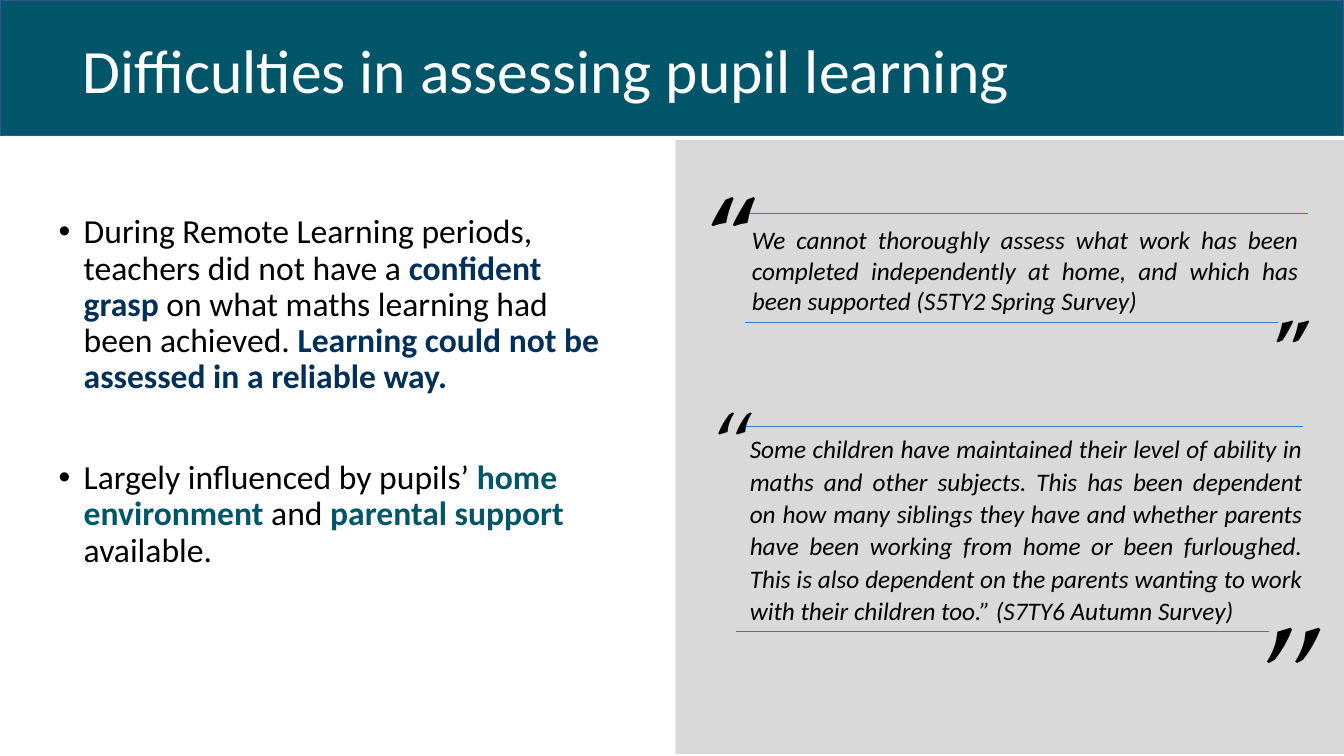
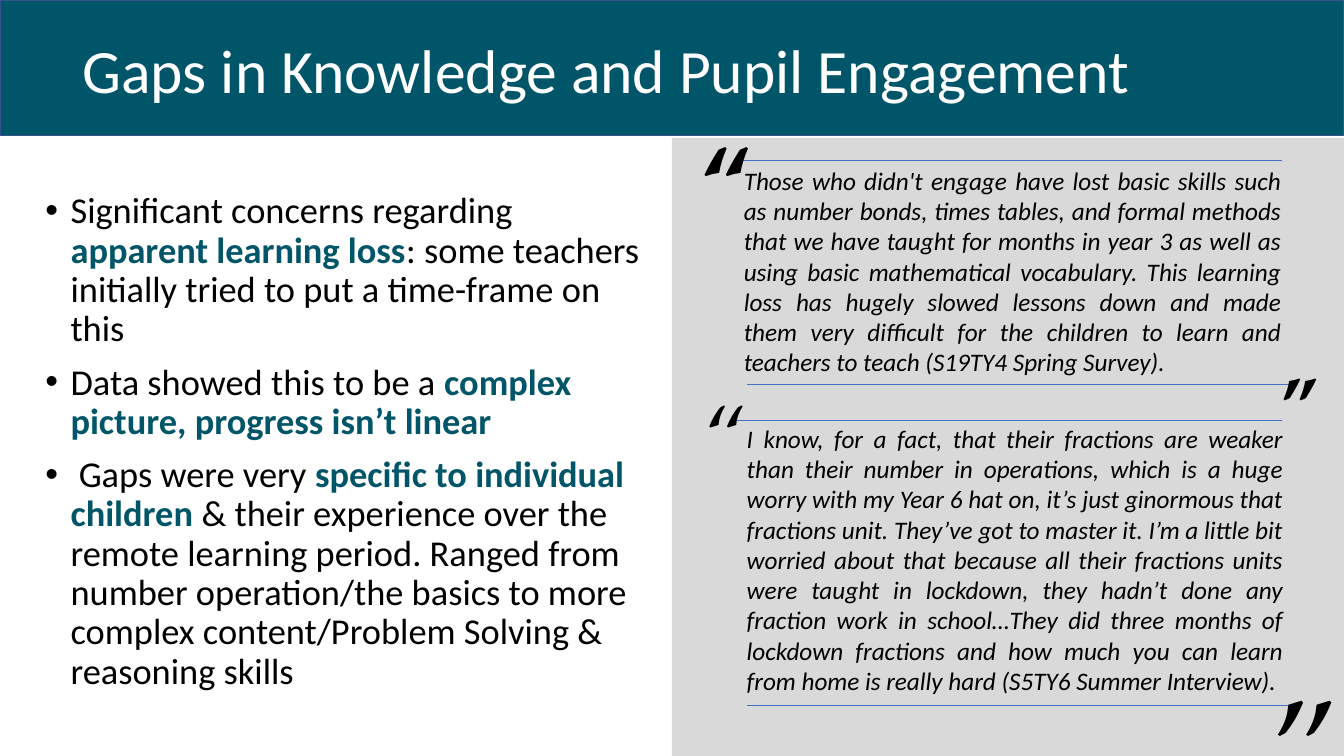
from dataclasses import dataclass
from typing import NamedTuple

from lxml import etree
from pptx import Presentation
from pptx import util as u
from pptx.dml.color import RGBColor
from pptx.enum import shapes, text
from pptx.oxml.ns import qn

# Shared look
WIDTH, HEIGHT = 960, 540
TEAL, NAVY, GREY = "005568", "003057", "D9D9D9"
BLUE, EDGE, BLACK, WHITE = "4472C4", "325491", "000000", "FFFFFF"
FONT, MARK_FONT = "Calibri", "TeX Gyre Pagella"
BAND_HEIGHT = 97


class Box(NamedTuple):
    left: float
    top: float
    width: float
    height: float


class Rule(NamedTuple):
    start: float
    end: float
    y: float


class Mark(NamedTuple):
    left: float
    top: float
    size: float
    bold: bool = False


class Run(NamedTuple):
    words: str
    color: str = BLACK  # any other colour marks bold emphasis


@dataclass
class Quote:
    words: str
    box: Box
    upper: Rule
    lower: Rule
    opening: Mark
    closing: Mark
    indent: float = 0
    spacing: float = 1.0
    after: float = 0


@dataclass
class Page:
    title: str
    body: Box
    size: float
    gaps: list[float]
    bullets: list[list[Run]]
    panel: Box
    quotes: list[Quote]


TITLE = Box(51.8, 0, 828, 104.4)

PAGES = [
    Page(
        "Difficulties in assessing pupil learning",
        Box(34.6, 149.8, 418.3, 342.7), 24, [10, 46],
        [
            [Run("During Remote Learning periods, teachers did not have a "),
             Run("confident grasp ", NAVY),
             Run("on what maths learning had been achieved. "),
             Run("Learning could not be assessed in a reliable way.", NAVY)],
            [Run("Largely influenced by pupils’ "),
             Run("home environment ", TEAL), Run("and "),
             Run("parental support ", TEAL), Run("available.")],
        ],
        Box(482.4, 100, 477.6, 438.5),
        [
            Quote(
                "We cannot thoroughly assess what work has been completed "
                "independently at home, and which has been supported "
                "(S5TY2 Spring Survey)",
                Box(530, 157, 404.6, 72.7),
                Rule(535.7, 934.6, 152.6), Rule(532, 913, 230.4),
                Mark(499, 115.2, 72, True), Mark(903.6, 209.5, 54, True)),
            Quote(
                "Some children have maintained their level of ability in "
                "maths and other subjects. This has been dependent on how "
                "many siblings they have and whether parents have been "
                "working from home or been furloughed. This is also "
                "dependent on the parents wanting to work with their "
                "children too.” (S7TY6 Autumn Survey)",
                Box(492.5, 304.6, 445, 146.2),
                Rule(532, 931, 304.6), Rule(525.6, 906.5, 450.7),
                Mark(503.3, 274.3, 60), Mark(893.5, 417.6, 96),
                indent=36, spacing=1.07, after=8),
        ],
    ),
    Page(
        "Gaps in Knowledge and Pupil Engagement",
        Box(25.2, 133.9, 440, 378.7), 26, [10, 10, 10],
        [
            [Run("Significant concerns regarding "),
             Run("apparent learning loss", TEAL),
             Run(": some teachers initially tried to put a time-frame on "
                 "this")],
            [Run("Data showed this to be a "),
             Run("complex picture, progress isn’t linear", TEAL)],
            [Run(" Gaps were very "),
             Run("specific to individual children ", TEAL),
             Run("& their experience over the remote learning period. "
                 "Ranged from number operation/the basics to more complex "
                 "content/Problem Solving & reasoning skills")],
        ],
        Box(480, 98.6, 480, 441.4),
        [
            Quote(
                "Those who didn't engage have lost basic skills such as "
                "number bonds, times tables, and formal methods that we "
                "have taught for months in year 3 as well as using basic "
                "mathematical vocabulary. This learning loss has hugely "
                "slowed lessons down and made them very difficult for the "
                "children to learn and teachers to teach "
                "(S19TY4 Spring Survey).",
                Box(524.2, 114.5, 398.2, 159.8),
                Rule(526.3, 915.8, 114.5), Rule(533.5, 924.5, 274.3),
                Mark(493.9, 79.9, 72, True), Mark(908.6, 250.6, 54, True)),
            Quote(
                "I know, for a fact, that their fractions are weaker than "
                "their number in operations, which is a huge worry with my "
                "Year 6 hat on, it’s just ginormous that fractions unit. "
                "They’ve got to master it. I’m a little bit worried about "
                "that because all their fractions units were taught in "
                "lockdown, they hadn’t done any fraction work in "
                "school…They did three months of lockdown fractions and how "
                "much you can learn from home is really hard "
                "(S5TY6 Summer Interview).",
                Box(490.3, 298.8, 433.4, 203.8),
                Rule(524.9, 915.8, 300.2), Rule(533.5, 923, 504),
                Mark(496.8, 269.3, 60), Mark(901.4, 469.4, 96),
                indent=36, after=8),
        ],
    ),
]


def rgb(value: str) -> RGBColor:
    return RGBColor.from_string(value)


def points(box: Box) -> list[u.Length]:
    return [u.Pt(v) for v in box]


def add_text(p, words: str, *, size: float, color: str = BLACK,
             font: str = FONT, bold: bool = False,
             italic: bool = False) -> None:
    r = p.add_run()
    r.text = words
    f = r.font
    f.name, f.size, f.bold, f.italic = font, u.Pt(size), bold, italic
    f.color.rgb = rgb(color)


def indent_paragraph(p, left: float, first: float) -> None:
    pPr = p._p.get_or_add_pPr()
    pPr.set("marL", str(int(u.Pt(left))))
    pPr.set("indent", str(int(u.Pt(first))))


def place(sp, box: Box, anchor=text.MSO_ANCHOR.TOP):
    sp.left, sp.top, sp.width, sp.height = points(box)
    tf = sp.text_frame
    tf.word_wrap = True
    tf.auto_size = text.MSO_AUTO_SIZE.NONE
    tf.vertical_anchor = anchor
    return tf


def add_textbox(s, box: Box):
    sp = s.shapes.add_textbox(*points(box))
    return place(sp, box).paragraphs[0]


def add_rect(s, box: Box, fill: str, edge: str | None = None):
    sp = s.shapes.add_shape(shapes.MSO_SHAPE.RECTANGLE, *points(box))
    sp.shadow.inherit = False
    sp.fill.solid()
    sp.fill.fore_color.rgb = rgb(fill)
    if edge:
        sp.line.color.rgb = rgb(edge)
        sp.line.width = u.Pt(1)
    else:
        sp.line.fill.background()
    return sp


def add_rule(s, rule: Rule) -> None:
    line = s.shapes.add_connector(
        shapes.MSO_CONNECTOR.STRAIGHT, u.Pt(rule.start), u.Pt(rule.y),
        u.Pt(rule.end), u.Pt(rule.y))
    line.line.color.rgb = rgb(BLUE)
    line.line.width = u.Pt(0.5)
    etree.SubElement(line.element.spPr, qn("a:effectLst"))


def add_mark(s, glyph: str, mark: Mark) -> None:
    height = min(mark.size * 1.3, HEIGHT - mark.top)
    p = add_textbox(s, Box(mark.left, mark.top, 50, height))
    add_text(p, glyph, size=mark.size, font=MARK_FONT, bold=mark.bold)


def add_quote(s, quote: Quote) -> None:
    p = add_textbox(s, quote.box)
    p.alignment = text.PP_ALIGN.JUSTIFY
    p.line_spacing = quote.spacing
    p.space_after = u.Pt(quote.after)
    indent_paragraph(p, quote.indent, 0)
    add_text(p, quote.words, size=18, italic=True)
    for rule in (quote.upper, quote.lower):
        add_rule(s, rule)
    add_mark(s, "“", quote.opening)
    add_mark(s, "”", quote.closing)


def add_title(s, words: str) -> None:
    title = s.shapes.title
    p = place(title, TITLE, text.MSO_ANCHOR.MIDDLE).paragraphs[0]
    p.alignment = text.PP_ALIGN.LEFT
    p.line_spacing = 0.9
    add_text(p, words, size=44, color=WHITE)
    # The band lies behind the title
    band = add_rect(s, Box(0, 0, WIDTH, BAND_HEIGHT), TEAL, EDGE)
    title.element.addprevious(band.element)


def add_bullets(s, page: Page) -> None:
    tf = place(s.placeholders[1], page.body)
    for i, (runs, gap) in enumerate(zip(page.bullets, page.gaps)):
        p = tf.add_paragraph() if i else tf.paragraphs[0]
        p.line_spacing = 0.9
        p.space_before = u.Pt(gap)
        indent_paragraph(p, 18, -18)
        for run in runs:
            add_text(p, run.words, size=page.size, color=run.color,
                     bold=run.color != BLACK)


def add_page(prs, page: Page) -> None:
    s = prs.slides.add_slide(prs.slide_layouts[1])
    add_title(s, page.title)
    add_bullets(s, page)
    add_rect(s, page.panel, GREY)
    for quote in page.quotes:
        add_quote(s, quote)


def main() -> None:
    prs = Presentation()
    prs.slide_width, prs.slide_height = u.Pt(WIDTH), u.Pt(HEIGHT)
    for page in PAGES:
        add_page(prs, page)
    prs.save("out.pptx")


if __name__ == "__main__":
    main()
